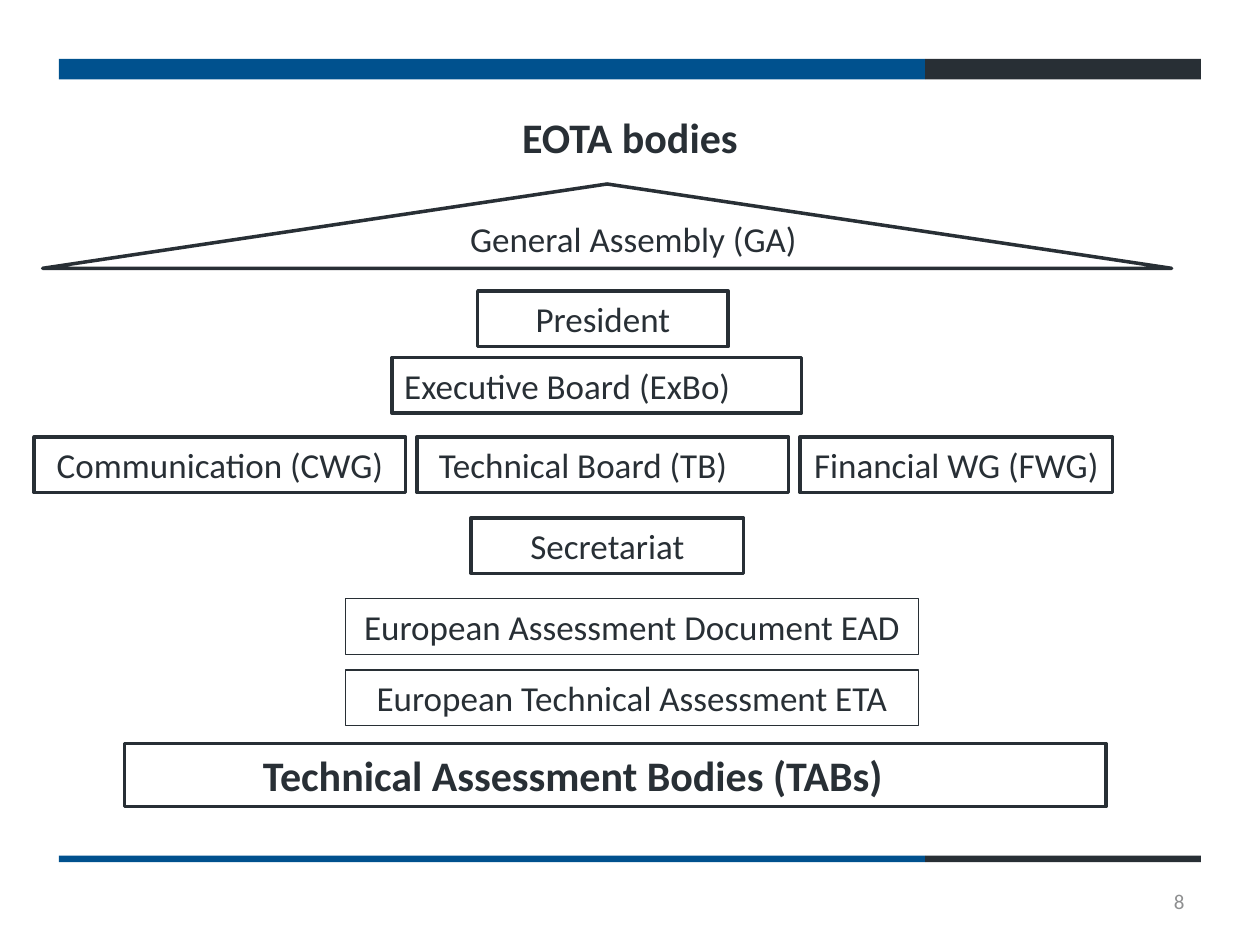
from dataclasses import dataclass

from pptx import Presentation
from pptx.dml.color import RGBColor
from pptx.enum.shapes import MSO_SHAPE
from pptx.enum.text import MSO_ANCHOR, PP_ALIGN
from pptx.util import Cm, Pt

RECTANGLE = MSO_SHAPE.RECTANGLE
TRIANGLE = MSO_SHAPE.ISOSCELES_TRIANGLE
MIDDLE = MSO_ANCHOR.MIDDLE
LEFT, CENTER, RIGHT = PP_ALIGN.LEFT, PP_ALIGN.CENTER, PP_ALIGN.RIGHT


@dataclass(frozen=True)
class Theme:
    font: str = "Calibri"
    blue: RGBColor = RGBColor(0x00, 0x51, 0x8E)
    dark: RGBColor = RGBColor(0x28, 0x2F, 0x35)
    gray: RGBColor = RGBColor(0x8E, 0x8F, 0x90)
    white: RGBColor = RGBColor(0xFF, 0xFF, 0xFF)
    heading: int = 24
    body: int = 20
    small: int = 12
    thick: float = 2
    thin: float = 0.75


THEME = Theme()
BOX_HEIGHT = 1.12
INSET = 0.25


def write_text(box, text, size=THEME.body, color=THEME.dark, bold=False,
               align=CENTER, inset=INSET, wrap=True):
    """Fill a box with one formatted paragraph."""
    frame = box.text_frame
    frame.word_wrap = wrap
    frame.vertical_anchor = MIDDLE
    frame.margin_left = Cm(inset)
    para = frame.paragraphs[0]
    para.alignment = align
    span = para.add_run()
    span.text = text
    span.font.name = THEME.font
    span.font.size = Pt(size)
    span.font.bold = bold
    span.font.color.rgb = color


def add_figure(page, kind, left, top, width, height, fill=None, line=None):
    """Add a preset shape; line is an outline width in points."""
    shape = page.shapes.add_shape(kind, Cm(left), Cm(top), Cm(width), Cm(height))
    shape.shadow.inherit = False
    if fill is None:
        shape.fill.background()
    else:
        shape.fill.solid()
        shape.fill.fore_color.rgb = fill
    if line is None:
        shape.line.fill.background()
    else:
        shape.line.width = Pt(line)
        shape.line.color.rgb = THEME.dark
    return shape


def add_body(page, text, left, top, width, height=BOX_HEIGHT,
             line=THEME.thick, **text_format):
    """Add an outlined box naming one body or document."""
    box = add_figure(page, RECTANGLE, left, top, width, height, THEME.white, line)
    write_text(box, text, **text_format)


def add_label(page, text, left, top, width, height, **text_format):
    box = page.shapes.add_textbox(Cm(left), Cm(top), Cm(width), Cm(height))
    write_text(box, text, **text_format)


def add_band(page, top, height):
    """Add a two-coloured band across the page."""
    add_figure(page, RECTANGLE, 1.19, top, 17.46, height, THEME.blue)
    add_figure(page, RECTANGLE, 18.65, top, 5.56, height, THEME.dark)


def main():
    deck = Presentation()
    deck.slide_width, deck.slide_height = Cm(25.4), Cm(19.05)
    page = deck.slides.add_slide(deck.slide_layouts[6])

    # Bands and title
    add_band(page, 1.19, 0.41)
    add_band(page, 17.25, 0.13)
    add_label(page, "EOTA bodies", 1.27, 1.57, 22.86, 2.36,
              size=THEME.heading, bold=True)

    # Roof
    add_figure(page, TRIANGLE, 0.86, 3.71, 22.76, 1.7, line=THEME.thick)
    add_label(page, "General Assembly (GA)", 6.27, 4.24, 13, BOX_HEIGHT)

    # Governing bodies
    add_body(page, "President", 9.63, 5.87, 5.05)
    add_body(page, "Executive Board (ExBo)", 7.9, 7.21, 8.26, align=LEFT)

    # Working groups, side by side
    groups_top = 8.81
    add_body(page, "Communication (CWG)", 0.69, groups_top, 7.49)
    add_body(page, "Technical Board (TB)", 8.41, groups_top, 7.49,
             align=LEFT, inset=0.44)
    add_body(page, "Financial WG (FWG)", 16.13, groups_top, 6.3, wrap=False)

    # Secretariat and documents
    add_body(page, "Secretariat", 9.5, 10.44, 5.49)
    documents = ("European Assessment Document EAD",
                 "European Technical Assessment ETA")
    for row, name in enumerate(documents):
        add_body(page, name, 6.96, 12.07 + row * 1.44, 11.56, line=THEME.thin)

    # Foundation
    add_body(page, "Technical Assessment Bodies (TABs)", 2.51, 14.99, 19.79, 1.27,
             size=THEME.heading, bold=True, align=LEFT, inset=2.79)

    # Page number
    add_label(page, "8", 18.21, 17.66, 5.92, 1.01,
              size=THEME.small, color=THEME.gray, align=RIGHT)

    deck.save("out.pptx")


if __name__ == "__main__":
    main()
